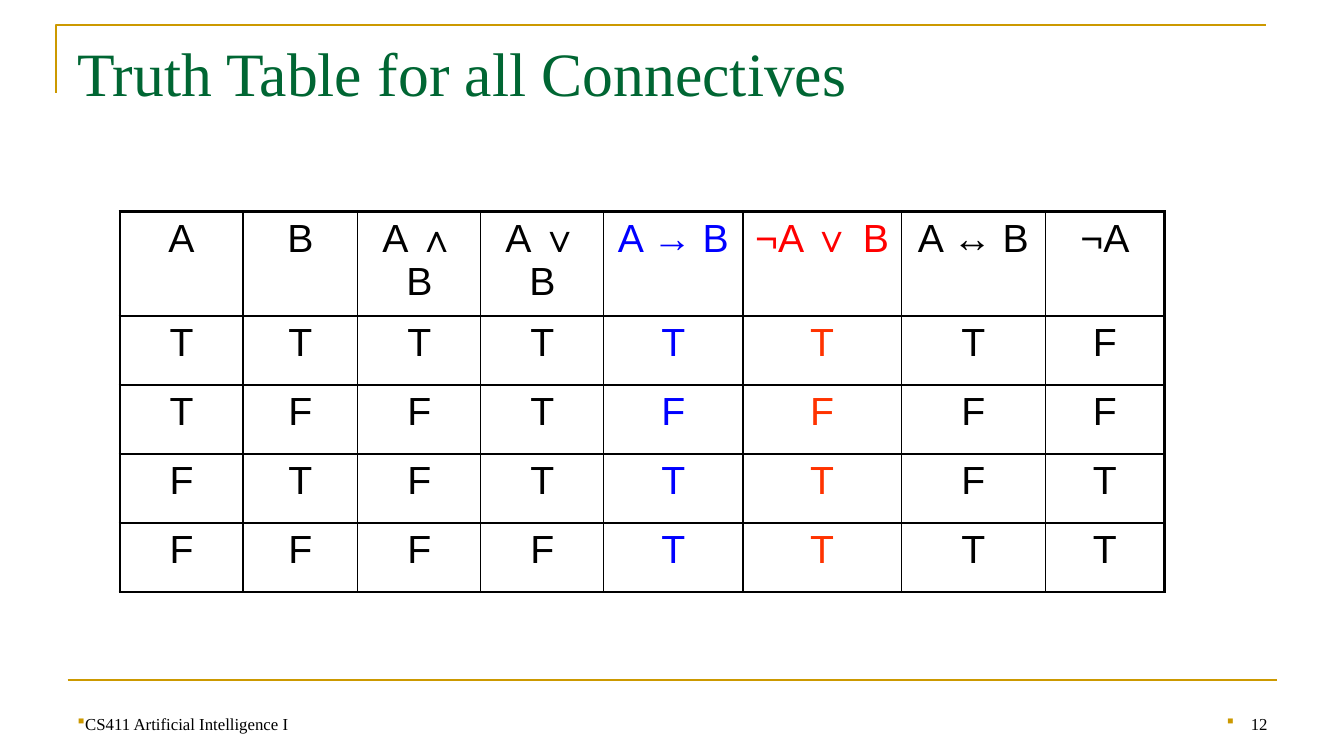
from lxml.etree import SubElement
from pptx import Presentation
from pptx.dml.color import RGBColor
from pptx.enum.shapes import MSO_CONNECTOR as Connector
from pptx.enum.text import MSO_ANCHOR as Anchor, PP_ALIGN as Align
from pptx.oxml import parse_xml
from pptx.oxml.ns import nsdecls, qn
from pptx.util import Inches, Pt

BLACK = RGBColor(0x00, 0x00, 0x00)
GREEN = RGBColor(0x00, 0x66, 0x33)
GOLD = RGBColor(0xCC, 0x99, 0x00)
BLUE = RGBColor(0x00, 0x00, 0xFF)
RED = RGBColor(0xFF, 0x00, 0x00)
ORANGE_RED = RGBColor(0xFF, 0x33, 0x00)
SERIF, SANS = "Times New Roman", "Arial"

TITLE = "Truth Table for all Connectives"
COURSE = "CS411 Artificial Intelligence I"
PAGE_NUMBER = "12"

# Heading, width, side margin, heading colour, value colour
COLUMNS = [
    ("A", 1.22, 0.1, BLACK, BLACK),
    ("B", 1.14, 0.1, BLACK, BLACK),
    ("A ∧ B", 1.22, 0.15, BLACK, BLACK),
    ("A ∨ B", 1.22, 0.15, BLACK, BLACK),
    ("A → B", 1.38, 0.1, BLUE, BLUE),
    ("¬A ∨ B", 1.57, 0.1, RED, ORANGE_RED),
    ("A ↔ B", 1.43, 0.1, BLACK, BLACK),
    ("¬A", 1.18, 0.1, BLACK, BLACK),
]
VALUES = ["TTTTTTTF", "TFFTFFFF", "FTFTTTFT", "FFFFTTTT"]
HEADER_HEIGHT, ROW_HEIGHT = 0.75, 0.685
TABLE_LEFT, TABLE_TOP = 1.19, 2.1
THICK, THIN = 2.25, 1


def format_text(paragraph, size, font, color, align=Align.LEFT):
    paragraph.alignment = align
    for run in paragraph.runs:
        run.font.size = Pt(size)
        run.font.name = font
        run.font.color.rgb = color


def add_text(slide, text, box, size, color, align=Align.LEFT, anchor=Anchor.TOP):
    shape = slide.shapes.add_textbox(*map(Inches, box))
    frame = shape.text_frame
    frame.word_wrap = True
    frame.vertical_anchor = anchor
    frame.text = text
    format_text(frame.paragraphs[0], size, SERIF, color, align)
    return frame.paragraphs[0]


def add_bullet(paragraph, hang):
    """Put a gold square before the paragraph, hanging by the given inches."""
    properties = paragraph._p.get_or_add_pPr()
    properties.set("marL", str(Inches(hang)))
    properties.set("indent", str(-Inches(hang)))
    color = SubElement(properties, qn("a:buClr"))
    SubElement(color, qn("a:srgbClr"), val=str(GOLD))
    SubElement(properties, qn("a:buFont"), typeface="Wingdings")
    SubElement(properties, qn("a:buChar"), char="§")


def set_borders(cell, widths):
    """Draw the left, right, top and bottom borders, widths in points."""
    properties = cell._tc.get_or_add_tcPr()
    for index, (side, width) in enumerate(zip("LRTB", widths)):
        properties.insert(index, parse_xml(
            f'<a:ln{side} {nsdecls("a")} w="{Pt(width)}"><a:solidFill>'
            f'<a:srgbClr val="{BLACK}"/></a:solidFill></a:ln{side}>'))


def add_frame_lines(slide):
    builder = slide.shapes.build_freeform(Inches(0.56), Inches(0.92))
    builder.add_line_segments(
        [(Inches(0.56), Inches(0.25)), (Inches(12.56), Inches(0.25))], close=False)
    corner = builder.convert_to_shape()
    corner.shadow.inherit = False
    corner.fill.background()
    rule = slide.shapes.add_connector(
        Connector.STRAIGHT, Inches(0.67), Inches(6.75), Inches(12.67), Inches(6.75))
    SubElement(rule._element.spPr, qn("a:effectLst"))
    for shape in (corner, rule):
        shape.line.color.rgb = GOLD
        shape.line.width = Pt(1.5)


def add_truth_table(slide):
    rows = [[column[0] for column in COLUMNS], *VALUES]
    last_row, last_column = len(rows) - 1, len(COLUMNS) - 1
    width = sum(column[1] for column in COLUMNS)
    height = HEADER_HEIGHT + ROW_HEIGHT * last_row
    table = slide.shapes.add_table(
        len(rows), len(COLUMNS), Inches(TABLE_LEFT), Inches(TABLE_TOP),
        Inches(width), Inches(height)).table
    table.first_row = table.horz_banding = False
    for r, row in enumerate(rows):
        table.rows[r].height = Inches(ROW_HEIGHT if r else HEADER_HEIGHT)
        for c, (_, width, margin, heading_color, value_color) in enumerate(COLUMNS):
            table.columns[c].width = Inches(width)
            cell = table.cell(r, c)
            cell.margin_left = cell.margin_right = Inches(margin)
            cell.fill.background()
            edges = (c == 0, c == last_column, r == 0, r == last_row)
            set_borders(cell, [THICK if edge else THIN for edge in edges])
            cell.text_frame.text = row[c]
            paragraph = cell.text_frame.paragraphs[0]
            paragraph.space_before = Pt(5.6)
            format_text(paragraph, 28, SANS, value_color if r else heading_color,
                        Align.CENTER)


def main():
    presentation = Presentation()
    presentation.slide_width, presentation.slide_height = Inches(13.33), Inches(7.5)
    slide = presentation.slides.add_slide(presentation.slide_layouts[6])
    add_frame_lines(slide)
    add_text(slide, TITLE, (0.67, 0.3, 12, 1.25), 44, GREEN)
    course = add_text(slide, COURSE, (0.67, 6.83, 8.11, 0.5), 12, BLACK,
                      anchor=Anchor.BOTTOM)
    add_bullet(course, 0)
    number = add_text(slide, PAGE_NUMBER, (9.56, 6.83, 3.11, 0.5), 12, BLACK,
                      Align.RIGHT, Anchor.BOTTOM)
    add_bullet(number, 0.24)
    add_truth_table(slide)
    presentation.save("out.pptx")


if __name__ == "__main__":
    main()
